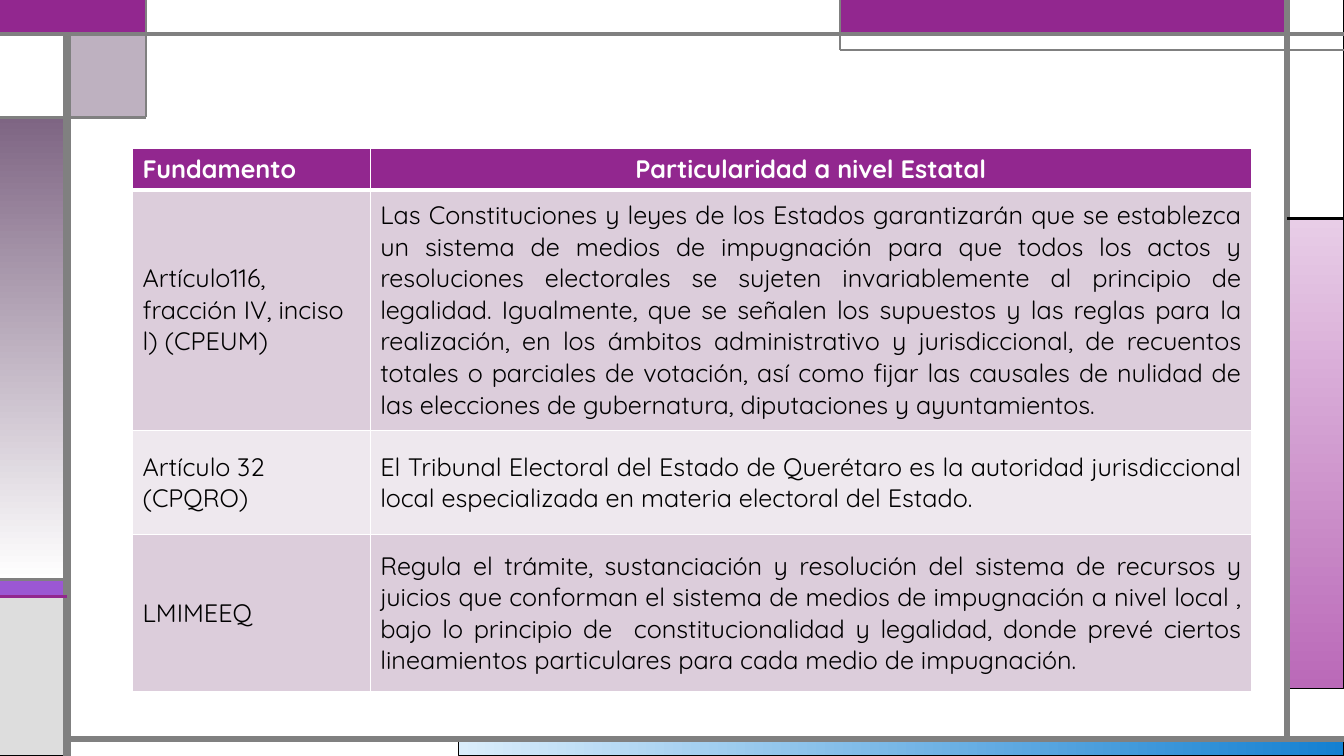
from lxml import etree
from pptx import Presentation
from pptx.dml.color import RGBColor
from pptx.enum.shapes import MSO_CONNECTOR, MSO_SHAPE
from pptx.enum.text import MSO_ANCHOR, PP_ALIGN
from pptx.oxml.ns import qn
from pptx.util import Cm, Pt

RECTANGLE = MSO_SHAPE.RECTANGLE
STRAIGHT = MSO_CONNECTOR.STRAIGHT
MIDDLE = MSO_ANCHOR.MIDDLE
LEFT, CENTER, JUSTIFY = PP_ALIGN.LEFT, PP_ALIGN.CENTER, PP_ALIGN.JUSTIFY

FONT = "Quicksand"
PAGE = (0, 0, 33.87, 19.05)
TABLE_BOX = (3.34, 3.73, 28.2, 13.67)
COLORS = {
    "purple": "92278F", "violet": "9B57D3", "indigo": "755DD9", "plum": "7E6583",
    "pink": "E8CDE7", "orchid": "BA69B8", "sky": "DAEDFB", "blue": "1480D1",
    "silver": "DDDDDD", "gray": "808080", "white": "FFFFFF", "black": "000000",
    "band": "DCCDDB", "pale band": "EEE8EE",
}
HEADINGS = ("Fundamento", "Particularidad a nivel Estatal")
PROVISIONS = [
    ("Artículo116, fracción IV, inciso l) (CPEUM)",
     "Las Constituciones y leyes de los Estados garantizarán que se establezca un sistema "
     "de medios de impugnación para que todos los actos y resoluciones electorales se "
     "sujeten invariablemente al principio de legalidad. Igualmente, que se señalen los "
     "supuestos y las reglas para la realización, en los ámbitos administrativo y "
     "jurisdiccional, de recuentos totales o parciales de votación, así como fijar las "
     "causales de nulidad de las elecciones de gubernatura, diputaciones y ayuntamientos."),
    ("Artículo 32 (CPQRO)",
     "El Tribunal Electoral del Estado de Querétaro es la autoridad jurisdiccional local "
     "especializada en materia electoral del Estado."),
    ("LMIMEEQ",
     "Regula el trámite, sustanciación y resolución del sistema de recursos y juicios que "
     "conforman el sistema de medios de impugnación a nivel local , bajo lo principio de  "
     "constitucionalidad y legalidad, donde prevé ciertos lineamientos particulares para "
     "cada medio de impugnación."),
]


def rgb(color):
    return RGBColor.from_string(COLORS[color])


def frame_grid(box):
    """Give the x and y positions on which the panels and rules of the frame meet."""
    left, top, width, height = box
    right, bottom = left + width, top + height
    xs = (left, left + 1.69, left + 3.67, left + 21.17, right - 1.43, right)
    ys = (top, top + 0.85, top + 1.27, top + 2.96, top + 5.5,
          bottom - 4.44, bottom - 4.02, bottom - 1.69, bottom - 0.43, bottom)
    return xs, ys


def add_panel(slide, x1, y1, x2, y2, fills, angle=0, outline="black", weight=0.75):
    panel = slide.shapes.add_shape(RECTANGLE, Cm(x1), Cm(y1), Cm(x2 - x1), Cm(y2 - y1))
    panel.shadow.inherit = False
    if len(fills) == 2:
        panel.fill.gradient()
        panel.fill.gradient_angle = angle
        for stop, color in zip(panel.fill.gradient_stops, fills):
            stop.color.rgb = rgb(color)
    else:
        panel.fill.solid()
        panel.fill.fore_color.rgb = rgb(fills[0])
    panel.line.color.rgb = rgb(outline)
    panel.line.width = Pt(weight)
    return panel


def add_panels(slide, box):
    (left, rail, tab, band, side, right), ys = frame_grid(box)
    top, header, _, tab_end, side_start, stripe, base, side_end, footer, bottom = ys
    downward = 270

    # Footer and right column
    add_panel(slide, band - 9.61, footer, right, bottom, ("sky", "blue"))
    add_panel(slide, side, side_start, right, side_end, ("pink", "orchid"), downward)
    add_panel(slide, side, top, right, side_start, ("white",))

    # Left column
    add_panel(slide, left, stripe, rail, base, ("violet",))
    add_panel(slide, left, base, rail, bottom, ("silver",))
    add_panel(slide, left, tab_end, rail, stripe, ("plum", "white"), downward)
    add_panel(slide, left, header, rail, tab_end, ("white",))

    # Translucent corner square
    corner = add_panel(slide, rail, header, tab, tab_end, ("plum",))
    color = corner.fill._xPr.find(qn("a:solidFill"))[0]
    etree.SubElement(color, qn("a:alpha"), val="50000")

    # Header band
    add_panel(slide, band, top, side, header, ("purple",), outline="indigo")
    add_panel(slide, left, top, tab, header, ("purple",), outline="purple", weight=1.5)
    add_panel(slide, tab, top, band, header, ("white",), outline="gray")


def add_rules(slide, box):
    (left, rail, tab, band, side, right), ys = frame_grid(box)
    top, header, ledge, tab_end, side_start, stripe, base, _, footer, bottom = ys
    rules = [
        (rail, header, rail, bottom, "gray", 6),
        (rail, footer, right, footer, "gray", 4.5),
        (side, top, side, footer, "gray", 4.5),
        (left, header, right, header, "gray", 3),
        (band, ledge, right, ledge, "gray", 1.5),
        (band, top, band, ledge, "gray", 1.5),
        (side, side_start, right, side_start, "black", 2.25),
        (tab, top, tab, tab_end, "gray", 1.5),
        (left, tab_end, tab, tab_end, "gray", 2.25),
        (left, stripe, rail, stripe, "gray", 2.25),
        (left, base, rail, base, "purple", 2.25),
    ]
    for x1, y1, x2, y2, color, weight in rules:
        rule = slide.shapes.add_connector(STRAIGHT, Cm(x1), Cm(y1), Cm(x2), Cm(y2))
        rule.line.color.rgb = rgb(color)
        rule.line.width = Pt(weight)
        etree.SubElement(rule._element.spPr, qn("a:effectLst"))


def set_borders(cell, top, bottom):
    properties = cell._tc.get_or_add_tcPr()
    sides = (("L", 1), ("R", 1), ("T", top), ("B", bottom))
    for position, (side, weight) in enumerate(sides):
        border = etree.Element(qn(f"a:ln{side}"), w=str(Pt(weight)))
        fill = etree.SubElement(border, qn("a:solidFill"))
        etree.SubElement(fill, qn("a:srgbClr"), val=COLORS["white"])
        properties.insert(position, border)


def fill_cell(cell, text, background, color, align, bold):
    cell.fill.solid()
    cell.fill.fore_color.rgb = rgb(background)
    cell.vertical_anchor = MIDDLE
    cell.text = text
    paragraph = cell.text_frame.paragraphs[0]
    paragraph.alignment = align
    font = paragraph.runs[0].font
    font.name, font.size, font.bold = FONT, Pt(18), bold
    font.color.rgb = rgb(color)


def add_provisions_table(slide, box):
    left, top, width, height = box
    rows = [HEADINGS, *PROVISIONS]
    table = slide.shapes.add_table(
        len(rows), len(HEADINGS), Cm(left), Cm(top), Cm(width), Cm(height)).table
    basis_width = 5.99
    for column, size in zip(table.columns, (basis_width, width - basis_width)):
        column.width = Cm(size)
    row_heights = (1.02, 6.06, 2.63)
    for row, size in zip(table.rows, (*row_heights, height - sum(row_heights))):
        row.height = Cm(size)

    for r, texts in enumerate(rows):
        heading = r == 0
        background = "purple" if heading else ("pale band", "band")[r % 2]
        for c, text in enumerate(texts):
            cell = table.cell(r, c)
            align = LEFT if c == 0 else CENTER if heading else JUSTIFY
            fill_cell(cell, text, background, "white" if heading else "black", align, heading)
            set_borders(cell, top=3 if r == 1 else 1, bottom=3 if heading else 1)


def main():
    prs = Presentation()
    prs.slide_width, prs.slide_height = Cm(PAGE[2]), Cm(PAGE[3])
    slide = prs.slides.add_slide(prs.slide_layouts[6])
    add_panels(slide, PAGE)
    add_rules(slide, PAGE)
    add_provisions_table(slide, TABLE_BOX)
    prs.save("out.pptx")


if __name__ == "__main__":
    main()
